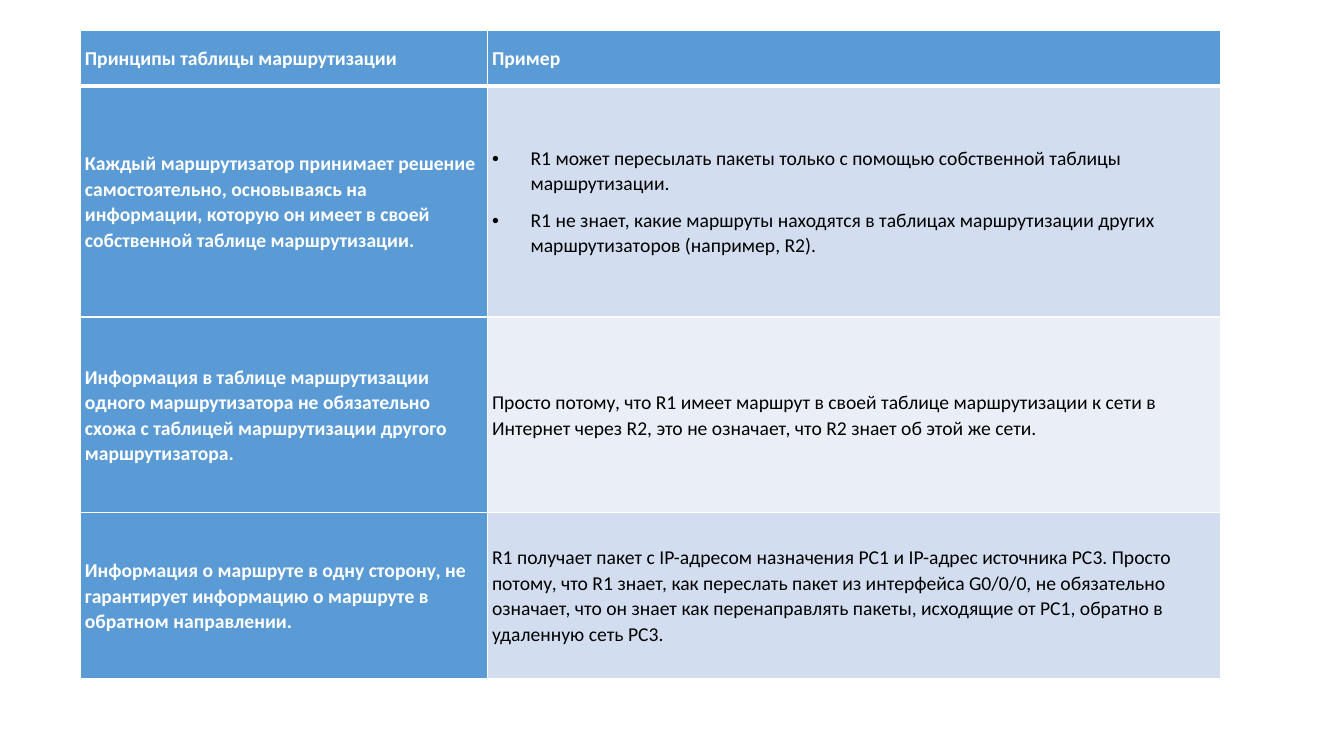
from lxml.etree import SubElement
from pptx import Presentation
from pptx.dml.color import RGBColor
from pptx.enum.text import MSO_VERTICAL_ANCHOR as Anchor
from pptx.oxml import parse_xml
from pptx.oxml.ns import nsdecls, qn
from pptx.util import Cm, Pt

WHITE, BLACK, BLUE = "FFFFFF", "000000", "5B9BD5"
BANDS = ["D2DEEF", "EAEFF7"]
COLUMN_WIDTHS = [10.26, 18.47]
ROW_HEIGHTS = [1.4, 5.82, 4.93, 4.17]
PRINCIPLES = [
    ("Принципы таблицы маршрутизации", ["Пример"]),
    ("Каждый маршрутизатор принимает решение самостоятельно, основываясь на "
     "информации, которую он имеет в своей собственной таблице маршрутизации.",
     ["R1 может пересылать пакеты только с помощью собственной таблицы маршрутизации.",
      "R1 не знает, какие маршруты находятся в таблицах маршрутизации других "
      "маршрутизаторов (например, R2)."]),
    ("Информация в таблице маршрутизации одного маршрутизатора не обязательно "
     "схожа с таблицей маршрутизации другого маршрутизатора.",
     ["Просто потому, что R1 имеет маршрут в своей таблице маршрутизации к сети в "
      "Интернет через R2, это не означает, что R2 знает об этой же сети."]),
    ("Информация о маршруте в одну сторону, не гарантирует информацию о маршруте "
     "в обратном направлении.",
     ["R1 получает пакет с IP-адресом назначения PC1 и IP-адрес источника PC3. "
      "Просто потому, что R1 знает, как переслать пакет из интерфейса G0/0/0, не "
      "обязательно означает, что он знает как перенаправлять пакеты, исходящие от "
      "PC1, обратно в удаленную сеть PC3."]),
]


def color(value):
    return RGBColor.from_string(value)


def write(para, text, size=14, ink=BLACK, bold=False, bullet=False):
    if bullet:
        properties = para._p.get_or_add_pPr()
        properties.set("marL", str(Cm(0.97)))
        properties.set("indent", str(-Cm(0.97)))
        SubElement(properties, qn("a:buFont"), typeface="Arial")
        SubElement(properties, qn("a:buChar"), char="•")
        tabs = SubElement(properties, qn("a:tabLst"))
        SubElement(tabs, qn("a:tab"), pos=str(Cm(1.27)), algn="l")
    para.line_spacing = 1.07
    para.space_after = Pt(8)
    span = para.add_run()
    span.text = text
    span.font.name = "Calibri"
    span.font.size = Pt(size)
    span.font.bold = bold
    span.font.color.rgb = color(ink)


class Page:
    margin = Cm(0.12)

    def __init__(self, deck):
        self.slide = deck.slides.add_slide(deck.slide_layouts[6])

    def table(self, left, top, widths, heights):
        frame = self.slide.shapes.add_table(
            len(heights), len(widths), Cm(left), Cm(top), Cm(sum(widths)), Cm(sum(heights)))
        for column, width in zip(frame.table.columns, widths):
            column.width = Cm(width)
        for row, height in zip(frame.table.rows, heights):
            row.height = Cm(height)
        return frame.table

    def borders(self, cell, **widths):
        properties = cell._tc.get_or_add_tcPr()
        for place, side in enumerate("LRTB"):
            width = Pt(widths.get(side, 1))
            properties.insert(place, parse_xml(
                f'<a:ln{side} {nsdecls("a")} w="{width}"><a:solidFill>'
                f'<a:srgbClr val="{WHITE}"/></a:solidFill></a:ln{side}>'))

    def cell(self, cell, texts, fill, **style):
        cell.fill.solid()
        cell.fill.fore_color.rgb = color(fill)
        cell.vertical_anchor = Anchor.MIDDLE
        cell.margin_left = cell.margin_right = self.margin
        cell.margin_top = cell.margin_bottom = self.margin
        box = cell.text_frame
        for number, text in enumerate(texts):
            para = box.add_paragraph() if number else box.paragraphs[0]
            write(para, text, bullet=len(texts) > 1, **style)


def main():
    deck = Presentation()
    deck.slide_width, deck.slide_height = Cm(33.87), Cm(19.05)
    page = Page(deck)
    table = page.table(2.02, 0.77, COLUMN_WIDTHS, ROW_HEIGHTS)
    heading = {"fill": BLUE, "ink": WHITE, "bold": True}
    for row, (principle, examples) in enumerate(PRINCIPLES):
        example_style = {"fill": BANDS[(row - 1) % 2]} if row else heading
        page.cell(table.cell(row, 0), [principle], **heading)
        page.cell(table.cell(row, 1), examples, **example_style)
        edges = {0: {"B": 3}, 1: {"T": 3}}.get(row, {})
        for column in range(len(COLUMN_WIDTHS)):
            page.borders(table.cell(row, column), **edges)
    deck.save("out.pptx")


if __name__ == "__main__":
    main()
